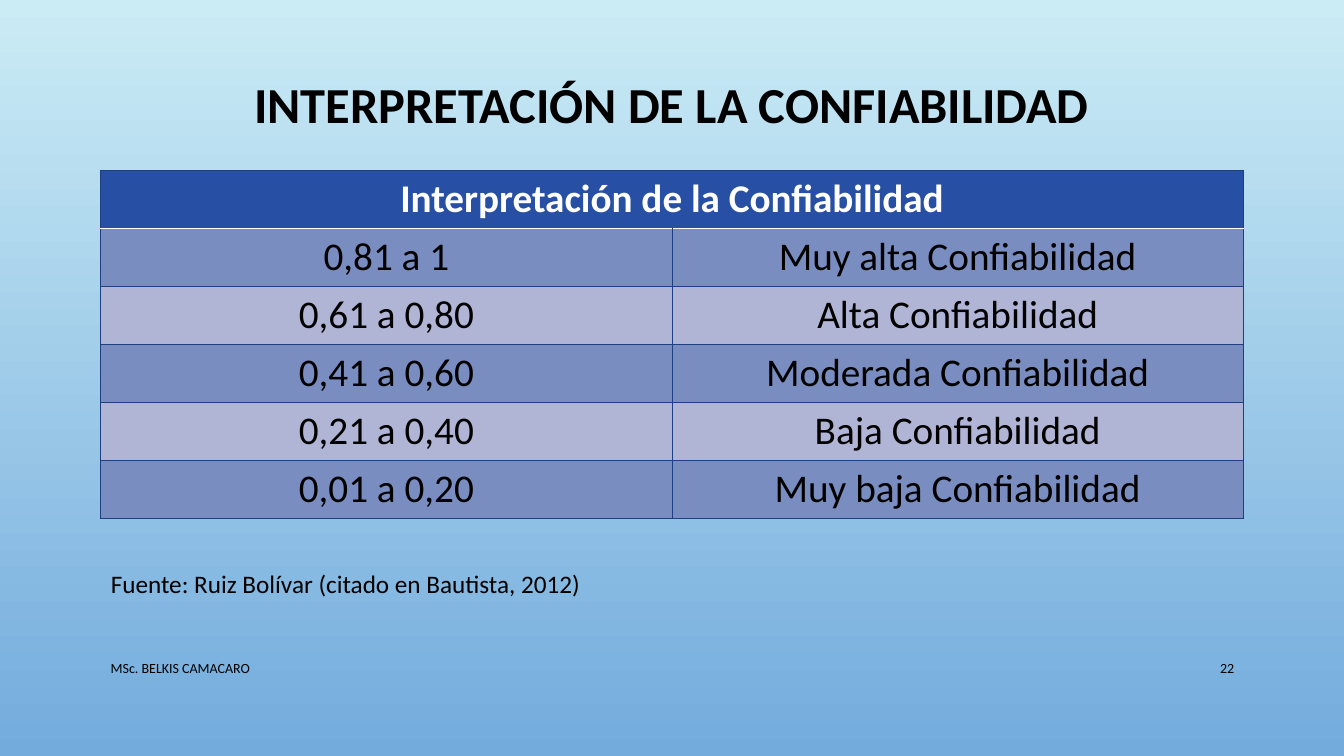
from lxml.etree import SubElement
from pptx import Presentation
from pptx.dml.color import RGBColor
from pptx.enum.text import MSO_ANCHOR as Anchor, PP_ALIGN as Align
from pptx.oxml.ns import qn
from pptx.util import Inches, Pt

SKY_TOP = RGBColor(0xCB, 0xEC, 0xF5)
SKY_BOTTOM = RGBColor(0x73, 0xAB, 0xDD)
HEADER_BLUE = RGBColor(0x27, 0x4F, 0xA4)
BAND_DARK = RGBColor(0x7A, 0x8D, 0xC0)
BAND_LIGHT = RGBColor(0xB1, 0xB5, 0xD5)
BORDER_BLUE = RGBColor(0x1F, 0x3F, 0x83)
WHITE = RGBColor(0xFF, 0xFF, 0xFF)
BLACK = RGBColor(0, 0, 0)

FONT = "Calibri"
LEFT, WIDTH = 1, 11.33
ROW_HEIGHT = 0.57

HEADING = "Interpretación de la Confiabilidad"
LEVELS = [
    ("0,81 a 1", "Muy alta Confiabilidad"),
    ("0,61 a 0,80", "Alta Confiabilidad"),
    ("0,41 a 0,60", "Moderada Confiabilidad"),
    ("0,21 a 0,40", "Baja Confiabilidad"),
    ("0,01 a 0,20", "Muy baja Confiabilidad"),
]


def write(frame, text, size, align=Align.LEFT, color=BLACK, bold=False):
    paragraph = frame.paragraphs[0]
    paragraph.alignment = align
    run = paragraph.add_run()
    run.text = text
    run.font.name = FONT
    run.font.size = Pt(size)
    run.font.bold = bold
    run.font.color.rgb = color
    return paragraph


def paint_background(slide):
    fill = slide.background.fill
    fill.gradient()
    fill.gradient_angle = 270
    for stop, color, position in zip(fill.gradient_stops, (SKY_TOP, SKY_BOTTOM), (0, 1)):
        stop.color.rgb = color
        stop.position = position


def add_title(slide, text):
    title = slide.shapes.title
    title.left, title.top = Inches(LEFT), Inches(0.68)
    title.width, title.height = Inches(WIDTH), Inches(0.76)
    title.text_frame.vertical_anchor = Anchor.MIDDLE
    write(title.text_frame, text, 36, Align.CENTER, bold=True).line_spacing = 0.9


def add_label(slide, text, left, top, width, size, align=Align.LEFT, anchor=Anchor.MIDDLE):
    label = slide.shapes.add_textbox(Inches(left), Inches(top), Inches(width), Inches(0.4))
    label.text_frame.word_wrap = True
    label.text_frame.vertical_anchor = anchor
    write(label.text_frame, text, size, align)


def set_borders(cell, is_header, below_header):
    properties = cell._tc.get_or_add_tcPr()
    for side in ("lnL", "lnR", "lnT", "lnB"):
        is_rule = (is_header and side == "lnB") or (below_header and side == "lnT")
        color, points = (WHITE, 1.25) if is_rule else (BORDER_BLUE, 0.75)
        line = SubElement(properties, qn(f"a:{side}"), w=str(Pt(points)))
        SubElement(SubElement(line, qn("a:solidFill")), qn("a:srgbClr"), val=str(color))


def fill_cell(cell, row):
    set_borders(cell, row == 0, row == 1)
    cell.fill.solid()
    if row == 0:
        cell.fill.fore_color.rgb = HEADER_BLUE
    else:
        cell.fill.fore_color.rgb = BAND_DARK if row % 2 else BAND_LIGHT


def add_reliability_table(slide):
    row_count = len(LEVELS) + 1
    table = slide.shapes.add_table(
        row_count, 2, Inches(LEFT), Inches(1.69),
        Inches(WIDTH), Inches(ROW_HEIGHT * row_count)).table
    for row in range(row_count):
        for column in range(2):
            fill_cell(table.cell(row, column), row)
    heading = table.cell(0, 0)
    heading.merge(table.cell(0, 1))
    write(heading.text_frame, HEADING, 28, Align.CENTER, WHITE, True)
    for row, level in enumerate(LEVELS, 1):
        for column, text in enumerate(level):
            write(table.cell(row, column).text_frame, text, 28, Align.CENTER)


def main():
    deck = Presentation()
    deck.slide_width, deck.slide_height = Inches(13.33), Inches(7.5)
    slide = deck.slides.add_slide(deck.slide_layouts[5])
    paint_background(slide)
    add_title(slide, "INTERPRETACIÓN DE LA CONFIABILIDAD")
    add_reliability_table(slide)
    add_label(slide, "MSc. BELKIS CAMACARO", LEFT, 6.43, 7.3, 10)
    add_label(slide, "22", 11.5, 6.43, 0.84, 10, Align.RIGHT)
    add_label(slide, "Fuente: Ruiz Bolívar (citado en Bautista, 2012)",
              LEFT, 5.59, 5.05, 18, anchor=Anchor.TOP)
    deck.save("out.pptx")


if __name__ == "__main__":
    main()
